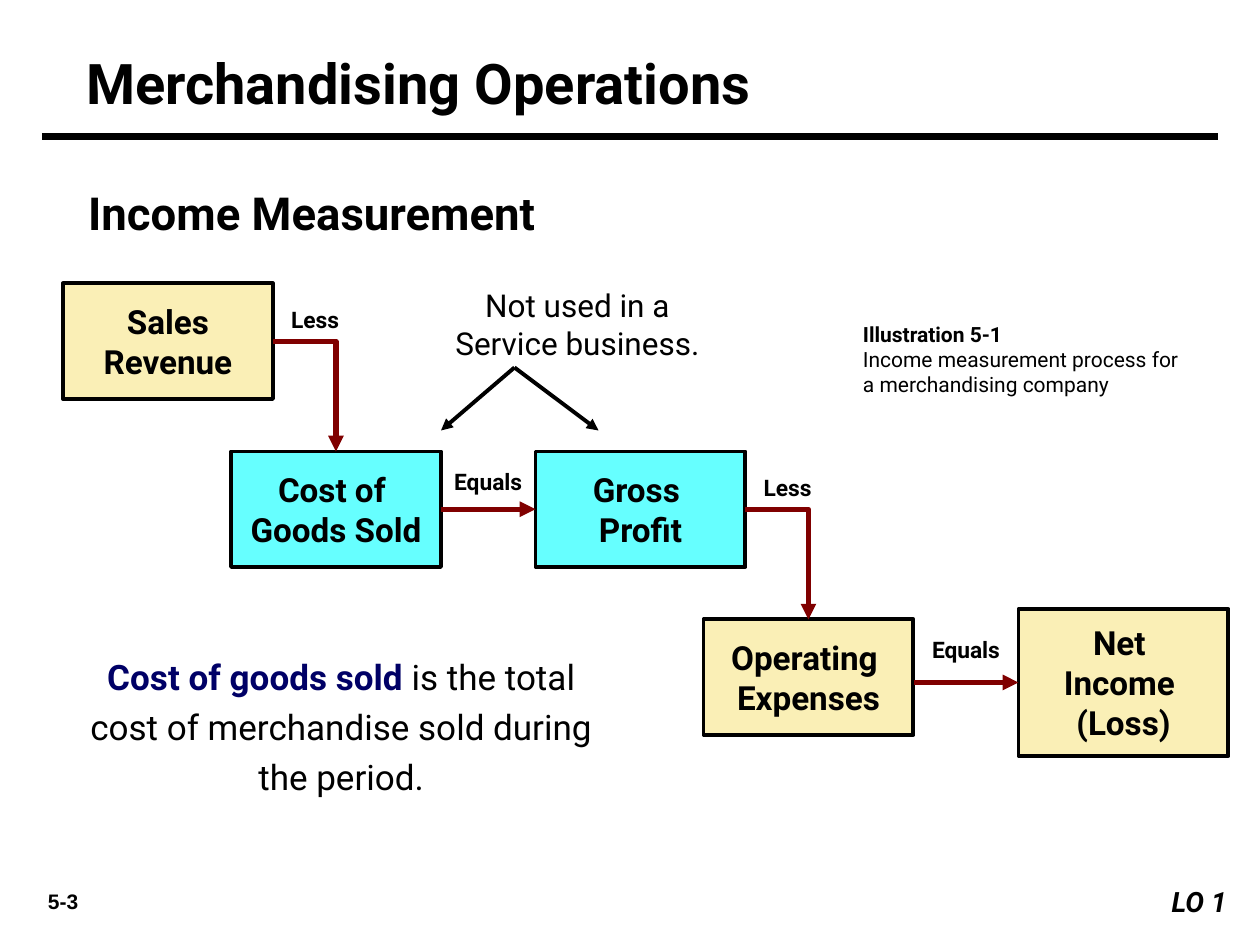
from dataclasses import dataclass

from lxml.etree import SubElement
from pptx import Presentation
from pptx.dml.color import RGBColor
from pptx.enum.shapes import MSO_CONNECTOR, MSO_SHAPE
from pptx.enum.text import MSO_ANCHOR, PP_ALIGN
from pptx.oxml.ns import qn
from pptx.util import Pt


@dataclass(frozen=True)
class Theme:
    font: str = "Roboto"
    number_font: str = "Arial"
    black: str = "000000"
    white: str = "FFFFFF"
    navy: str = "000066"
    maroon: str = "800000"
    cream: str = "FAEFB6"
    cyan: str = "66FFFF"
    title: int = 32
    subtitle: int = 26
    definition: int = 20
    step: int = 19
    note: int = 18
    objective: int = 16
    label: int = 13
    small: int = 12


THEME = Theme()
CENTER = {"alignment": PP_ALIGN.CENTER}


def apply_format(target, values):
    for name, value in values.items():
        setattr(target, name, value)


def write_text(shape, paragraphs, size, paragraph_format=None, frame_format=None, font=THEME.font):
    frame = shape.text_frame
    apply_format(frame, {"word_wrap": True, "vertical_anchor": MSO_ANCHOR.TOP, **(frame_format or {})})
    for index, runs in enumerate(paragraphs):
        paragraph = frame.add_paragraph() if index else frame.paragraphs[0]
        apply_format(paragraph, {"alignment": PP_ALIGN.LEFT, **(paragraph_format or {})})
        for text, run_format in runs:
            values = {"name": font, "size": Pt(size), "bold": True, "color": THEME.black, **run_format}
            run = paragraph.add_run()
            run.text = text
            run.font.color.rgb = RGBColor.from_string(values.pop("color"))
            apply_format(run.font, values)


def add_text(slide, box, paragraphs, size, **formats):
    shape = slide.shapes.add_textbox(*map(Pt, box))
    write_text(shape, paragraphs, size, **formats)
    return shape


def add_line(slide, start, end, color, width, arrow=True, elbow=False):
    kind = MSO_CONNECTOR.ELBOW if elbow else MSO_CONNECTOR.STRAIGHT
    connector = slide.shapes.add_connector(kind, *map(Pt, (*start, *end)))
    connector.line.color.rgb = RGBColor.from_string(color)
    connector.line.width = Pt(width)
    properties = connector._element.spPr
    if elbow:
        properties.find(qn("a:prstGeom")).set("prst", "bentConnector2")
    if arrow:
        SubElement(connector.line._get_or_add_ln(), qn("a:tailEnd"), type="triangle")
    SubElement(properties, qn("a:effectLst"))
    return connector


def add_heading(slide, left, top, width):
    title = slide.shapes.title
    apply_format(title, {"left": Pt(left + 18), "top": Pt(top), "width": Pt(600), "height": Pt(44)})
    write_text(title, [[("Merchandising Operations", {})]], THEME.title)
    add_line(slide, (left, top + 54), (left + width, top + 54), THEME.black, 4.5, arrow=False)
    margins = {"margin_left": Pt(14.4), "margin_right": Pt(14.4)}
    add_text(slide, (left + 12, top + 78, 444, 42), [[("Income Measurement", {})]],
             THEME.subtitle, frame_format=margins)


def add_step(slide, box, lines, fill):
    shape = slide.shapes.add_shape(MSO_SHAPE.RECTANGLE, *map(Pt, box))
    shape.shadow.inherit = False
    shape.fill.solid()
    shape.fill.fore_color.rgb = RGBColor.from_string(fill)
    shape.line.color.rgb = RGBColor.from_string(THEME.black)
    shape.line.width = Pt(2.25)
    write_text(shape, [[(line, {})] for line in lines], THEME.step, CENTER,
               {"word_wrap": False, "vertical_anchor": MSO_ANCHOR.MIDDLE})
    return shape


def add_label(slide, text, center, top):
    add_text(slide, (center - 33, top, 66, 23), [[(text, {})]], THEME.label, paragraph_format=CENTER)


def add_process(slide, left, top):
    width, height, shift = 120, 66, 96
    sales = (left, top, width, height)
    cost = (left + shift, top + shift, width, height)
    gross = (left + 270, top + shift, width, height)
    operating = (left + 270 + shift, top + 2 * shift, width, height)
    net = (left + 546, top + 2 * shift - 6, width, 84)

    add_step(slide, sales, ["Sales", "Revenue"], THEME.cream)
    cost_shape = add_step(slide, cost, ["Cost of ", "Goods Sold"], THEME.cyan)
    gross_shape = add_step(slide, gross, ["Gross ", "Profit"], THEME.cyan)
    add_step(slide, operating, ["Operating ", "Expenses"], THEME.cream)
    net_shape = add_step(slide, net, ["Net ", "Income ", "(Loss)"], THEME.cream)

    for source, target in ((sales, cost), (gross, operating)):
        right = source[0] + width
        add_line(slide, (right, source[1] + height / 2), (target[0] + width / 2, target[1]),
                 THEME.maroon, 3, elbow=True)
        add_label(slide, "Less", right + 24, source[1] + 9)

    for source, target in ((cost, gross), (operating, net)):
        right, middle = source[0] + width, target[1] + target[3] / 2
        connector = add_line(slide, (right, middle), (target[0], middle), THEME.maroon, 3)
        if source is cost:
            connector.begin_connect(cost_shape, 3)
        connector.end_connect(gross_shape if target is gross else net_shape, 1)
        add_label(slide, "Equals", (right + target[0]) / 2, source[1] + 6)


def add_service_note(slide, left, top):
    add_text(slide, (left, top, 180, 50), [[("Not used in a Service business.", {"bold": False})]],
             THEME.note, paragraph_format=CENTER)
    for offset in (12, 102):
        add_line(slide, (left + 54, top + 50), (left + offset, top + 86), THEME.black, 2.25)


def add_definition(slide, box):
    runs = [("Cost of goods sold ", {"color": THEME.navy}),
            ("is the total cost of merchandise sold during the period.", {"bold": False})]
    add_text(slide, box, [runs], THEME.definition, paragraph_format={**CENTER, "line_spacing": 1.2})


def add_caption(slide, box):
    add_text(slide, box, [[("Illustration 5-1", {})],
                          [("Income measurement process for a merchandising company", {"bold": False})]],
             THEME.small)


def add_footer(slide, left, top, width):
    add_text(slide, (left, top + 2, 60, 22), [[("5-3", {})]], THEME.small,
             paragraph_format=CENTER, font=THEME.number_font)
    add_text(slide, (left + width - 60, top, 60, 27), [[("LO 1", {"italic": True})]],
             THEME.objective, paragraph_format={"alignment": PP_ALIGN.RIGHT})


def main():
    presentation = Presentation()
    apply_format(presentation, {"slide_width": Pt(720), "slide_height": Pt(540)})
    slide = presentation.slides.add_slide(presentation.slide_layouts[5])
    slide.background.fill.solid()
    slide.background.fill.fore_color.rgb = RGBColor.from_string(THEME.white)
    add_heading(slide, 24, 24, 672)
    add_definition(slide, (42, 366, 306, 94))
    add_service_note(slide, 240, 160)
    add_process(slide, 36, 162)
    add_caption(slide, (486, 180, 204, 51))
    add_footer(slide, 6, 502, 702)
    presentation.save("out.pptx")


if __name__ == "__main__":
    main()
